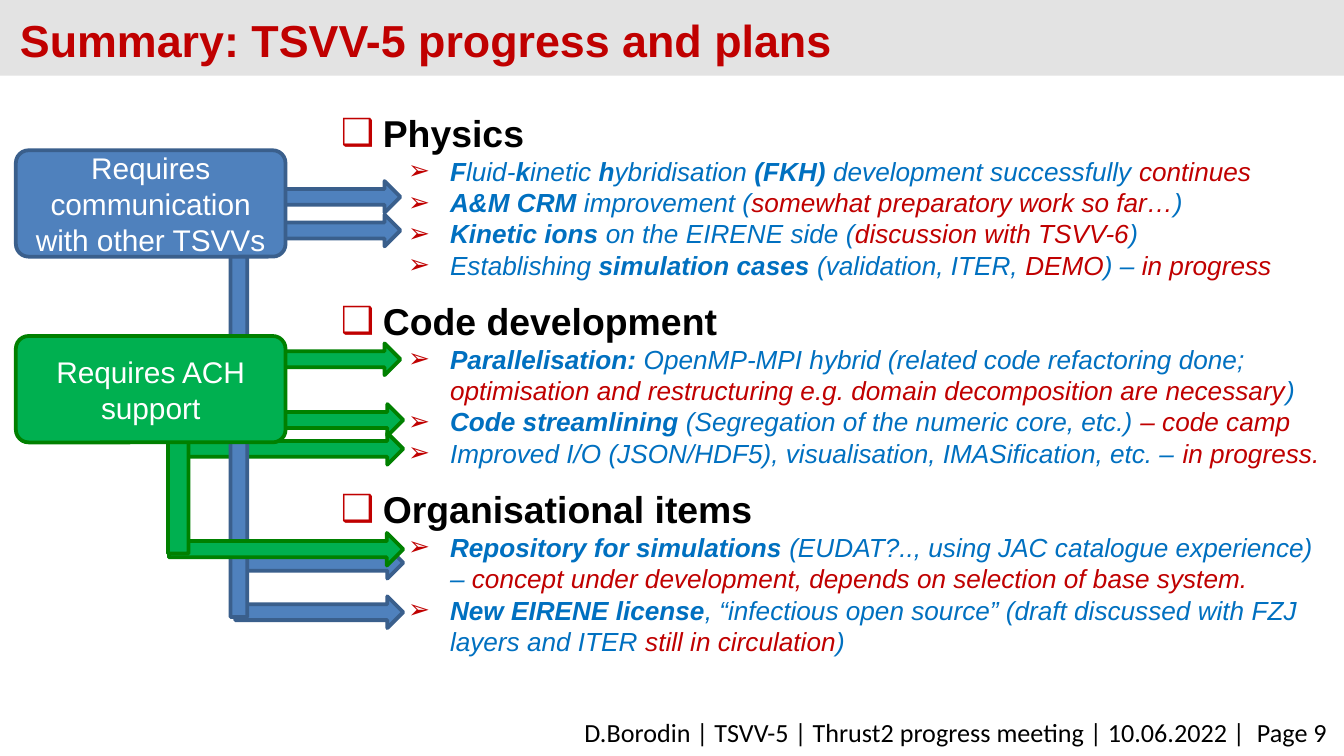
from lxml import etree
from pptx import Presentation
from pptx.dml.color import RGBColor
from pptx.enum.shapes import MSO_SHAPE
from pptx.enum.text import MSO_ANCHOR, PP_ALIGN
from pptx.oxml.ns import qn
from pptx.util import Pt

COLORS = {
    "bar": "E3E3E3", "red": "C00000", "black": "000000", "white": "FFFFFF",
    "text": "0070C0", "blue": "4F81BD", "blue_line": "3A5F8C",
    "green": "00B050", "green_line": "008000",
}

# In items, * toggles bold and ~ toggles red.
SECTIONS = [
    ("Physics", [
        "*F*luid-*k*inetic *h*ybridisation *(FKH)* development successfully ~continues~",
        "*A&M CRM *improvement (~somewhat preparatory work so far…~)",
        "*Kinetic ions *on the EIRENE side (~discussion with TSVV-6~)",
        "Establishing *simulation cases *(validation, ITER, ~DEMO~) – ~in progress~",
    ]),
    ("Code development", [
        "*Parallelisation:* OpenMP-MPI hybrid (related code refactoring done; "
        "~optimisation and restructuring e.g. domain decomposition are necessary~)",
        "*Code streamlining *(Segregation of the numeric core, etc.) ~– code camp~",
        "Improved I/O (JSON/HDF5), visualisation, IMASification, etc. – ~in progress.~",
    ]),
    ("Organisational items", [
        "*Repository for simulations *(EUDAT?.., using JAC catalogue experience) – "
        "~concept under development, depends on selection of base system.~",
        "*New EIRENE license*, “infectious open source” (draft discussed with FZJ "
        "layers and ITER ~still in circulation~)",
    ]),
]


def rgb(name):
    return RGBColor.from_string(COLORS[name])


def add_run(p, text, size=14, color="text", bold=False, italic=False, font="Arial"):
    r = p.add_run()
    r.text = text
    r.font.name, r.font.size = font, Pt(size)
    r.font.bold, r.font.italic = bold, italic
    r.font.color.rgb = rgb(color)


class SlideBuilder:
    def __init__(self, prs):
        self.slide = prs.slides.add_slide(prs.slide_layouts[5])
        self.shapes = self.slide.shapes

    def shape(self, kind, x, y, w, h, fill, line=None, rotation=0):
        sp = self.shapes.add_shape(kind, Pt(x), Pt(y), Pt(w), Pt(h))
        sp.shadow.inherit = False
        sp.rotation = rotation
        sp.fill.solid()
        sp.fill.fore_color.rgb = rgb(fill)
        if line:
            sp.line.color.rgb = rgb(line)
            sp.line.width = Pt(2)
        else:
            sp.line.fill.background()
        return sp

    def title(self, text, x, y, w, h):
        sp = self.shapes.title
        sp.left, sp.top, sp.width, sp.height = Pt(x), Pt(y), Pt(w), Pt(h)
        tf = sp.text_frame
        tf.vertical_anchor = MSO_ANCHOR.MIDDLE
        p = tf.paragraphs[0]
        p.alignment, p.line_spacing = PP_ALIGN.LEFT, Pt(32)
        add_run(p, text, size=24, color="red", bold=True)
        self.shapes._spTree.append(sp._element)

    def text_box(self, x, y, w, h):
        tf = self.shapes.add_textbox(Pt(x), Pt(y), Pt(w), Pt(h)).text_frame
        tf.word_wrap = True
        return tf

    def footer(self, text, x, y, w, h):
        p = self.text_box(x, y, w, h).paragraphs[0]
        p.alignment = PP_ALIGN.RIGHT
        add_run(p, text, color="black", font="Calibri")

    def bullet(self, p, char, indent):
        pPr = p._p.get_or_add_pPr()
        pPr.set("marL", str(Pt(indent)))
        pPr.set("indent", str(-Pt(22.5)))
        clr = etree.SubElement(pPr, qn("a:buClr"))
        etree.SubElement(clr, qn("a:srgbClr"), val=COLORS["red"])
        etree.SubElement(pPr, qn("a:buFont"), typeface="Arial")
        etree.SubElement(pPr, qn("a:buChar"), char=char)

    def outline(self, sections, x, y, w, h):
        tf = self.text_box(x, y, w, h)
        for i, (heading, items) in enumerate(sections):
            p = tf.add_paragraph() if i else tf.paragraphs[0]
            self.bullet(p, "❑", 22.5)
            if i:
                p.space_before = Pt(9.5)
            add_run(p, heading, size=20, color="black", bold=True)
            for item in items:
                p = tf.add_paragraph()
                p.level = 1
                self.bullet(p, "➢", 58.5)
                self.marked_text(p, item)

    def marked_text(self, p, text):
        for i, part in enumerate(text.split("~")):
            for j, piece in enumerate(part.split("*")):
                if piece:
                    add_run(p, piece, color="red" if i % 2 else "text",
                            bold=j % 2 == 1, italic=True)

    def arrow(self, x, y, w, h, color, rotation=0):
        self.shape(MSO_SHAPE.RIGHT_ARROW, x, y, w, h, color, color + "_line", rotation)

    def box(self, text, y, color):
        sp = self.shape(MSO_SHAPE.ROUNDED_RECTANGLE, 8.5, y, 144.5, 57, color, color + "_line")
        sp.adjustments[0] = 0.12
        tf = sp.text_frame
        tf.word_wrap = True
        tf.vertical_anchor = MSO_ANCHOR.MIDDLE
        p = tf.paragraphs[0]
        p.alignment = PP_ALIGN.CENTER
        add_run(p, text, size=16, color="white")


def main():
    prs = Presentation()
    prs.slide_width, prs.slide_height = Pt(720), Pt(405)
    s = SlideBuilder(prs)
    s.shape(MSO_SHAPE.RECTANGLE, 0, 0, 720, 40.5, "bar")
    s.footer("D.Borodin | TSVV-5 | Thrust2 progress meeting | 10.06.2022 |\u00a0 Page 9".replace("\u00a0", " "),
             143.5, 380, 575, 24.5)
    s.title("Summary: TSVV-5 progress and plans", 3.5, 6, 660, 27)
    s.outline(SECTIONS, 175.5, 55.5, 544.5, 320)

    s.arrow(126, 319.5, 90, 17, "blue")
    s.arrow(90.5, 232, 125.5, 17, "green")
    s.arrow(126, 293, 90, 17, "blue")
    s.arrow(20.5, 214, 215, 18, "blue", rotation=270)
    for y in (97, 115):
        s.arrow(124.5, y, 90, 17, "blue")
    s.box("Requires communication with other TSVVs", 80.5, "blue")
    s.arrow(124.5, 184, 90, 17, "green")
    s.arrow(126, 216.5, 90, 17, "green")
    s.arrow(90.5, 285.5, 125.5, 17.5, "green")
    s.arrow(55.5, 245.5, 80, 22, "green", rotation=270)
    s.box("Requires ACH support", 180, "green")
    prs.save("out.pptx")


if __name__ == "__main__":
    main()
